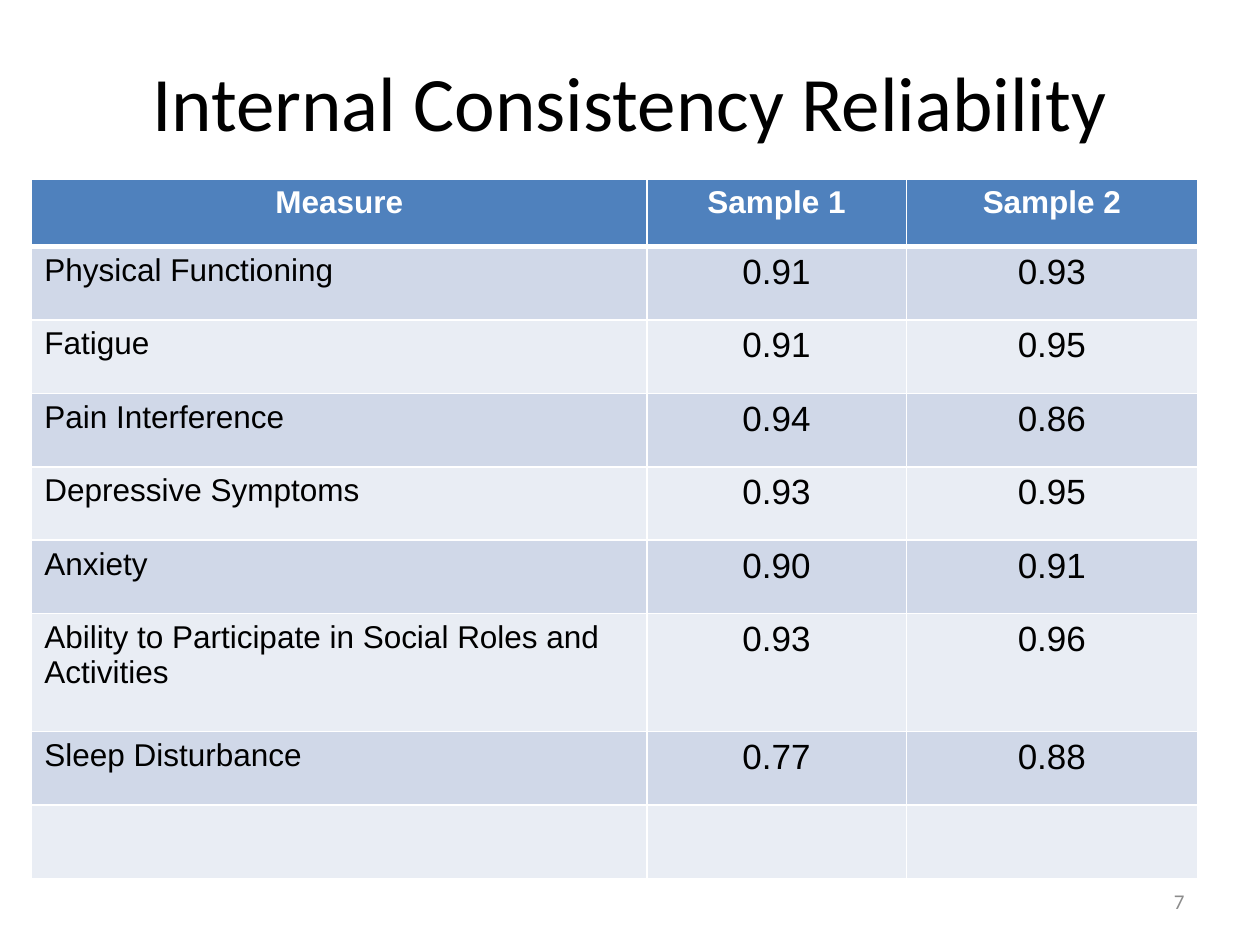
from lxml.etree import SubElement
from pptx import Presentation
from pptx.dml.color import RGBColor
from pptx.enum.text import MSO_ANCHOR, PP_ALIGN
from pptx.oxml.ns import qn
from pptx.util import Cm, Pt

TITLE = "Internal Consistency Reliability"
PAGE_NUMBER = "7"
HEADERS = ("Measure", "Sample 1", "Sample 2")
RELIABILITIES = [
    ("Physical Functioning", "0.91", "0.93"),
    ("Fatigue", "0.91", "0.95"),
    ("Pain Interference", "0.94", "0.86"),
    ("Depressive Symptoms", "0.93", "0.95"),
    ("Anxiety", "0.90", "0.91"),
    ("Ability to Participate in Social Roles and Activities", "0.93", "0.96"),
    ("Sleep Disturbance", "0.77", "0.88"),
    ("", "", ""),
]

THEME = {
    "title": {"name": "Calibri", "size": Pt(44), "color": "000000"},
    "header": {"name": "Arial", "size": Pt(18), "bold": True, "color": "FFFFFF"},
    "measure": {"name": "Arial", "size": Pt(18), "bold": False, "color": "000000"},
    "value": {"name": "Arial", "size": Pt(20), "bold": False, "color": "000000"},
    "number": {"name": "Calibri", "size": Pt(12), "color": "8C8C8C"},
    "header_fill": "4F81BD",
    "bands": ("D0D8E8", "E9EDF4"),
    "border": "FFFFFF",
}

TITLE_BOX = (1.27, 0.43, 22.86, 3.18)
NUMBER_BOX = (18.21, 17.65, 5.92, 1.02)
TABLE_LEFT, TABLE_TOP = 0.64, 3.61
COLUMN_WIDTHS = (12.4, 5.23, 5.87)
HEADER_HEIGHT, ROW_HEIGHT, TALL_ROW_HEIGHT = 1.36, 1.48, 2.38
LONG_LABEL = 40


def write(frame, text, style, alignment):
    paragraph = frame.paragraphs[0]
    paragraph.alignment = alignment
    span = paragraph.add_run()
    span.text = text
    for name, value in THEME[style].items():
        if name == "color":
            span.font.color.rgb = RGBColor.from_string(value)
        else:
            setattr(span.font, name, value)


def add_borders(cell, bottom_width):
    properties = cell._tc.get_or_add_tcPr()
    for side, width in (("L", 1), ("R", 1), ("T", 1), ("B", bottom_width)):
        line = SubElement(properties, qn(f"a:ln{side}"), w=str(Pt(width)))
        fill = SubElement(line, qn("a:solidFill"))
        SubElement(fill, qn("a:srgbClr"), val=THEME["border"])


def add_title(page):
    title = page.shapes.title
    for name, value in zip(("left", "top", "width", "height"), TITLE_BOX):
        setattr(title, name, Cm(value))
    title.text_frame.vertical_anchor = MSO_ANCHOR.MIDDLE
    write(title.text_frame, TITLE, "title", PP_ALIGN.CENTER)


def add_reliability_table(page):
    rows = [HEADERS, *RELIABILITIES]
    heights = [HEADER_HEIGHT] + [
        TALL_ROW_HEIGHT if len(row[0]) > LONG_LABEL else ROW_HEIGHT
        for row in RELIABILITIES
    ]
    table = page.shapes.add_table(
        len(rows), len(HEADERS), Cm(TABLE_LEFT), Cm(TABLE_TOP),
        Cm(sum(COLUMN_WIDTHS)), Cm(sum(heights)),
    ).table
    for column, width in zip(table.columns, COLUMN_WIDTHS):
        column.width = Cm(width)
    for row_index, (values, height) in enumerate(zip(rows, heights)):
        table.rows[row_index].height = Cm(height)
        is_header = row_index == 0
        color = THEME["header_fill"] if is_header else THEME["bands"][(row_index - 1) % 2]
        for column_index, text in enumerate(values):
            cell = table.cell(row_index, column_index)
            add_borders(cell, 3 if is_header else 1)
            cell.fill.solid()
            cell.fill.fore_color.rgb = RGBColor.from_string(color)
            is_measure = column_index == 0 and not is_header
            style = "header" if is_header else "measure" if is_measure else "value"
            if text:
                alignment = PP_ALIGN.LEFT if is_measure else PP_ALIGN.CENTER
                write(cell.text_frame, text, style, alignment)


def add_page_number(page):
    box = page.shapes.add_textbox(*map(Cm, NUMBER_BOX))
    box.text_frame.word_wrap = True
    box.text_frame.vertical_anchor = MSO_ANCHOR.MIDDLE
    write(box.text_frame, PAGE_NUMBER, "number", PP_ALIGN.RIGHT)


def main():
    deck = Presentation()
    deck.slide_width, deck.slide_height = Cm(25.4), Cm(19.05)
    page = deck.slides.add_slide(deck.slide_layouts.get_by_name("Title Only"))
    add_title(page)
    add_reliability_table(page)
    add_page_number(page)
    deck.save("out.pptx")


if __name__ == "__main__":
    main()
